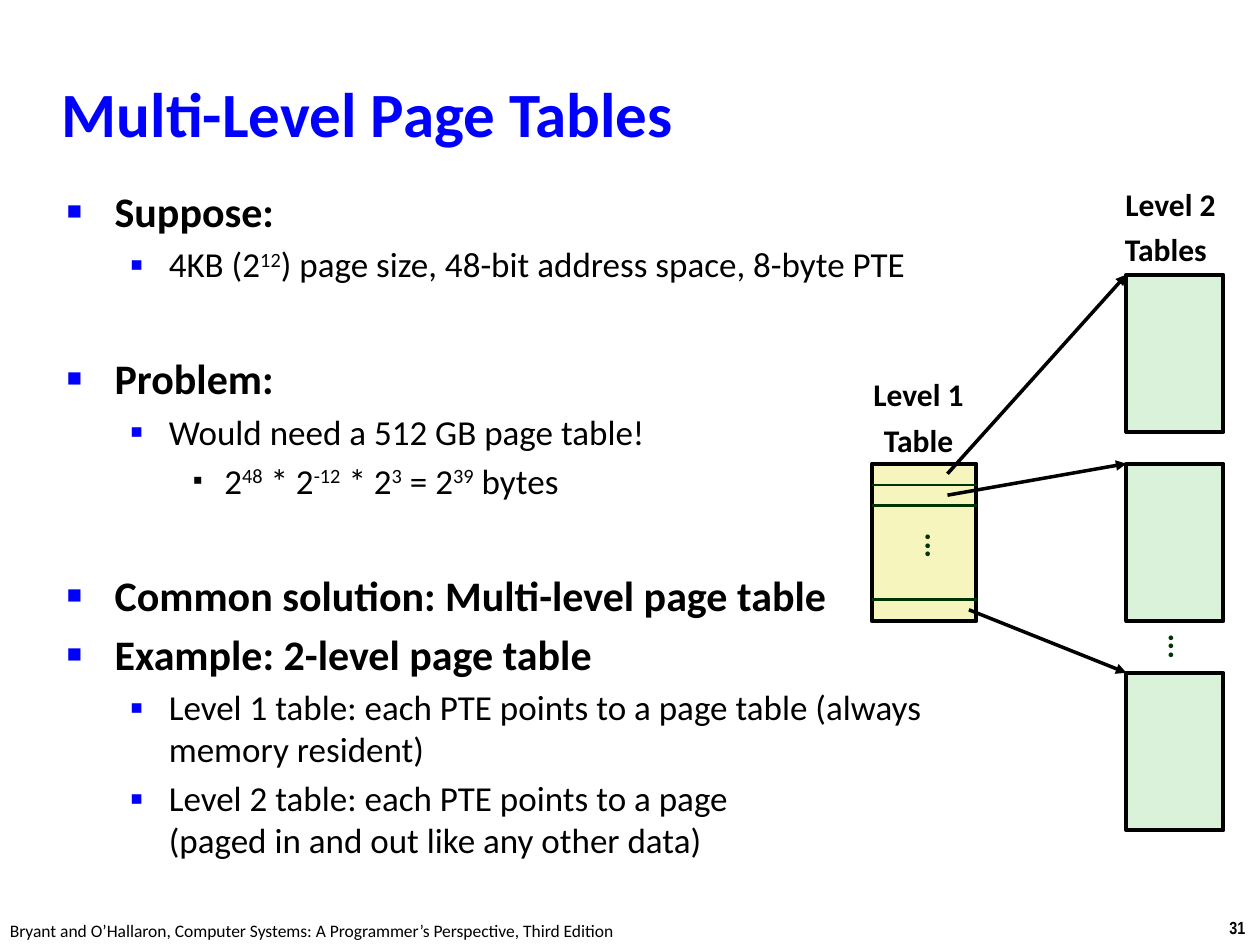
from lxml import etree
from pptx import Presentation
from pptx.dml.color import RGBColor
from pptx.enum.shapes import MSO_CONNECTOR, MSO_SHAPE
from pptx.enum.text import MSO_ANCHOR, MSO_AUTO_SIZE, PP_ALIGN
from pptx.oxml.ns import qn
from pptx.util import Inches, Pt

LEFT, CENTER = PP_ALIGN.LEFT, PP_ALIGN.CENTER
MIDDLE = MSO_ANCHOR.MIDDLE
NO_FIT = MSO_AUTO_SIZE.NONE
RECTANGLE = MSO_SHAPE.RECTANGLE
STRAIGHT = MSO_CONNECTOR.STRAIGHT

COLORS = {
    "title": "0000FF",
    "text": "000000",
    "rule": "003300",
    "level1": "F6F5BD",
    "level2": "DBF2DA",
}
# Per level: left margin, hanging indent, bullet, bullet percent, bullet colour, size, bold, space before
LEVELS = [
    (0.38, 0.38, "■", 60, "title", 24, True, 4.8),
    (0.81, 0.31, "▪", 110, "title", 20, False, 4),
    (1.25, 0.25, "▪", 80, "text", 20, False, 4),
]
SECTION_GAP = 39
# Level, text with superscripts between carets, whether a new section starts
BULLETS = [
    (0, "Suppose:", False),
    (1, "4KB (2^12^) page size, 48-bit address space, 8-byte PTE", False),
    (0, "Problem:", True),
    (1, "Would need a 512 GB page table!", False),
    (2, "2^48^ * 2^-12^ * 2^3^ = 2^39^ bytes", False),
    (0, "Common solution: Multi-level page table", True),
    (0, "Example: 2-level page table", False),
    (1, "Level 1 table: each PTE points to a page table (always memory resident)", False),
    (1, "Level 2 table: each PTE points to a page\n(paged in and out like any other data)", False),
]
TABLE_HEIGHT = 1.25
LEVEL1_LEFT, LEVEL1_TOP, LEVEL1_WIDTH = 6.92, 3.68, 0.83
LEVEL2_LEFT, LEVEL2_WIDTH = 8.94, 0.77
LEVEL2_TOPS = [2.18, 3.68, 5.34]
ARROW_STARTS = [(7.52, 3.76), (7.52, 3.93), (7.69, 4.84)]
ENTRY_RULES = [3.85, 4.01, 4.76]


def rgb(name):
    """Return the named colour."""
    return RGBColor.from_string(COLORS[name])


def style(para, size, color="text", bold=False, name="Calibri"):
    """Set the font of a whole paragraph."""
    font = para.font
    font.name, font.size, font.bold = name, Pt(size), bold
    font.color.rgb = rgb(color)


def place(shape, left, top, width, height):
    """Move and size a placeholder."""
    shape.left, shape.top = Inches(left), Inches(top)
    shape.width, shape.height = Inches(width), Inches(height)


def add_title(page, text):
    """Fill the title placeholder."""
    title = page.shapes.title
    place(title, 0.39, 0.48, 8.3, 0.83)
    frame = title.text_frame
    frame.text = text
    frame.auto_size = NO_FIT
    frame.vertical_anchor = MIDDLE
    para = frame.paragraphs[0]
    para.alignment = LEFT
    style(para, 36, "title", True)


def set_bullet(para, margin, hanging, char, percent, color):
    """Give a paragraph its indent and bullet."""
    props = para._p.get_or_add_pPr()
    props.set("marL", str(Inches(margin)))
    props.set("indent", str(-Inches(hanging)))
    fill = etree.SubElement(props, qn("a:buClr"))
    etree.SubElement(fill, qn("a:srgbClr"), val=COLORS[color])
    etree.SubElement(props, qn("a:buSzPct"), val=str(percent * 1000))
    etree.SubElement(props, qn("a:buFont"), typeface="Arial")
    etree.SubElement(props, qn("a:buChar"), char=char)


def add_spans(para, text):
    """Add runs, raising every piece between carets."""
    for index, piece in enumerate(text.split("^")):
        for row, line in enumerate(piece.split("\n")):
            if row:
                para.add_line_break()
            span = para.add_run()
            span.text = line
            if index % 2:
                span._r.get_or_add_rPr().set("baseline", "30000")


def add_bullets(page):
    """Fill the body placeholder with the outline."""
    body = page.placeholders[1]
    place(body, 0.43, 1.42, 7.57, 5.44)
    frame = body.text_frame
    frame.auto_size = NO_FIT
    for index, (level, text, new_section) in enumerate(BULLETS):
        *bullet, size, bold, gap = LEVELS[level]
        para = frame.add_paragraph() if index else frame.paragraphs[0]
        para.level = level
        set_bullet(para, *bullet)
        para.space_before = Pt(SECTION_GAP if new_section else gap if index else 0)
        style(para, size, bold=bold)
        add_spans(para, text)


def add_text(page, at, lines, size, aligns=(LEFT,), spacing=None, **look):
    """Add an unwrapped text box with one paragraph per line."""
    box = page.shapes.add_textbox(*map(Inches, at))
    frame = box.text_frame
    frame.word_wrap = False
    for index, (line, align) in enumerate(zip(lines, aligns)):
        para = frame.add_paragraph() if index else frame.paragraphs[0]
        para.text, para.alignment = line, align
        para.line_spacing = spacing
        if index:
            para.space_before = Pt(6.8)
        style(para, size, **look)
    return box


def add_dots(page, left, top):
    """Add a vertical ellipsis."""
    box = add_text(page, (left, top, 0.4, 0.36), ["..."], 18, spacing=0.88, color="rule", bold=True)
    box.rotation = 270


def add_table_box(page, left, top, width, color):
    """Add the outlined block of one page table."""
    block = page.shapes.add_shape(RECTANGLE, *map(Inches, (left, top, width, TABLE_HEIGHT)))
    block.shadow.inherit = False
    block.fill.solid()
    block.fill.fore_color.rgb = rgb(color)
    block.line.color.rgb = rgb("text")
    block.line.width = Pt(2.25)


def add_line(page, start, end, color, width, arrow=False):
    """Add a straight line, with an arrowhead at its end if asked."""
    line = page.shapes.add_connector(STRAIGHT, *map(Inches, start + end))
    line.line.color.rgb = rgb(color)
    line.line.width = Pt(width)
    if arrow:
        etree.SubElement(line.line._get_or_add_ln(), qn("a:tailEnd"), type="triangle")
    etree.SubElement(line._element.spPr, qn("a:effectLst"))


def add_diagram(page):
    """Draw the level 1 table pointing to the level 2 tables."""
    label = {"size": 18, "spacing": 0.88, "bold": True}
    add_text(page, (6.83, 2.97, 0.92, 0.73), ["Level 1", "Table"], aligns=(CENTER, CENTER), **label)
    add_text(page, (8.83, 1.46, 0.92, 0.73), ["Level 2", "Tables"], aligns=(CENTER, LEFT), **label)
    add_table_box(page, LEVEL1_LEFT, LEVEL1_TOP, LEVEL1_WIDTH, "level1")
    for top in LEVEL2_TOPS:
        add_table_box(page, LEVEL2_LEFT, top, LEVEL2_WIDTH, "level2")
    for start, top in zip(ARROW_STARTS, LEVEL2_TOPS):
        add_line(page, start, (LEVEL2_LEFT, top), "text", 2, arrow=True)
    for height in ENTRY_RULES:
        add_line(page, (LEVEL1_LEFT, height), (LEVEL1_LEFT + LEVEL1_WIDTH, height), "rule", 1.5)
    add_dots(page, 7.1, 4.15)
    add_dots(page, 9.03, 4.95)


def main():
    """Build and save the slide."""
    deck = Presentation()
    deck.slide_width, deck.slide_height = Inches(10), Inches(7.5)
    page = deck.slides.add_slide(deck.slide_layouts[1])
    add_text(page, (9.66, 7.23, 0.34, 0.27), ["31"], 10, bold=True, name="Arial Narrow")
    footer = "Bryant and O’Hallaron, Computer Systems: A Programmer’s Perspective, Third Edition"
    add_text(page, (-0.02, 7.25, 5.08, 0.27), [footer], 10)
    add_title(page, "Multi-Level Page Tables")
    add_bullets(page)
    add_diagram(page)
    deck.save("out.pptx")


if __name__ == "__main__":
    main()
